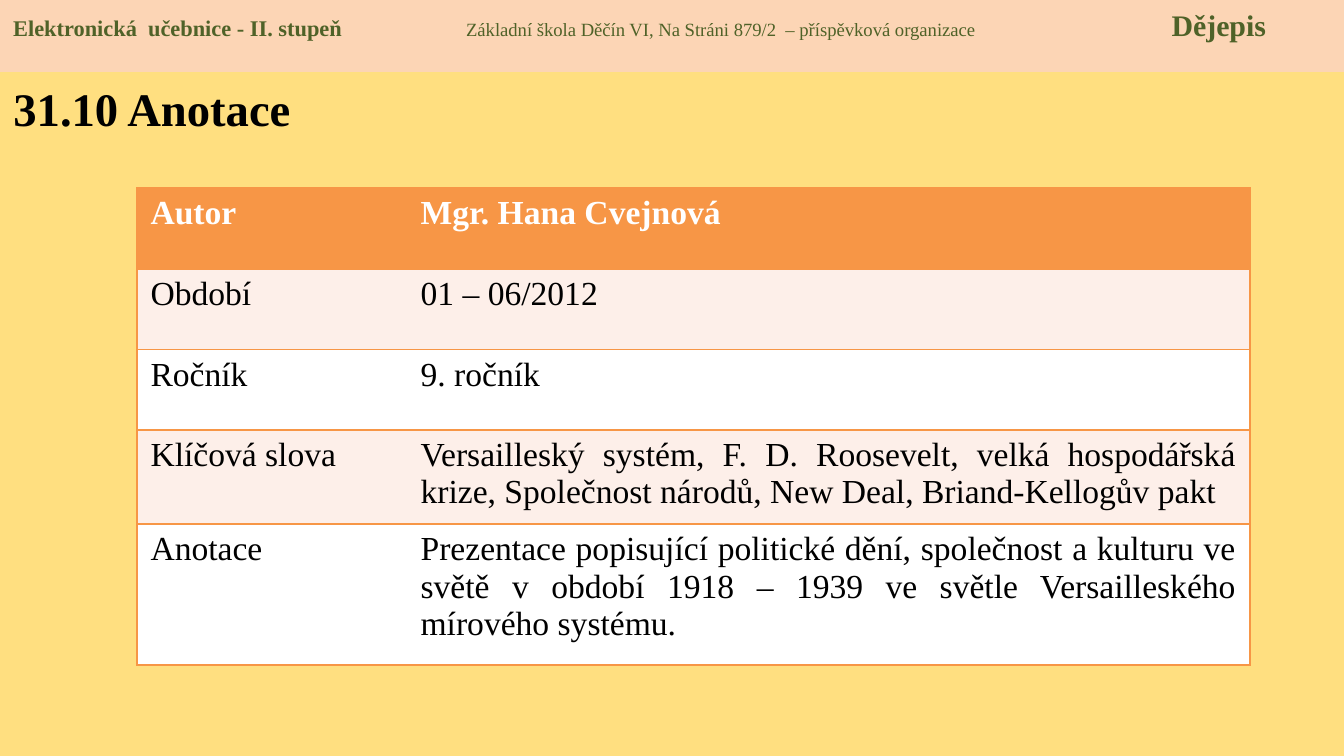
from lxml import etree
from pptx import Presentation
from pptx.dml.color import RGBColor
from pptx.enum.shapes import MSO_SHAPE
from pptx.enum.text import MSO_ANCHOR, PP_ALIGN
from pptx.oxml import parse_xml
from pptx.oxml.ns import nsdecls, qn
from pptx.util import Inches, Pt

RECT = MSO_SHAPE.RECTANGLE
TOP = MSO_ANCHOR.TOP
LEFT, JUST = PP_ALIGN.LEFT, PP_ALIGN.JUSTIFY
WIDE = 10
HIGH = WIDE * 9 / 16
GRID = 100
PLAIN = "{2D5ABB26-0587-4C30-8999-92F81FD0307C}"

HEAD = [
    ("Elektronická  učebnice - II. stupeň", 12, True),
    ("Základní škola Děčín VI, Na Stráni 879/2  – příspěvková organizace", 10, False),
    ("Dějepis", 16, True),
]
STOPS = [33.7, 86.2]
ROWS = [
    ("Autor", "Mgr. Hana Cvejnová"),
    ("Období", "01 – 06/2012"),
    ("Ročník", "9. ročník"),
    ("Klíčová slova", "Versailleský systém, F. D. Roosevelt, velká hospodářská krize, "
     "Společnost národů, New Deal, Briand-Kellogův pakt"),
    ("Anotace", "Prezentace popisující politické dění, společnost a kulturu ve světě "
     "v období 1918 – 1939 ve světle Versailleského mírového systému."),
]
COLS = [20.1, 62.7]
HIGHS = [6, 6, 6, 7, 10.5]


def color(code):
    return RGBColor.from_string(code)


def span(cells):
    return Inches(cells * WIDE / GRID)


class Deck:
    face = "Times New Roman"
    back, band, green = "FFDF80", "FCD5B5", "4F6228"
    orange, pale, white, black = "F79646", "FDEFE9", "FFFFFF", "000000"

    def __init__(self):
        self.prs = Presentation()
        self.prs.slide_width, self.prs.slide_height = Inches(WIDE), Inches(HIGH)
        self.slide = self.prs.slides.add_slide(self.prs.slide_layouts[5])
        self.paint(self.slide.background.fill, self.back)

    def paint(self, fill, code):
        fill.solid()
        fill.fore_color.rgb = color(code)

    def style(self, font, size, code, bold):
        font.name, font.size, font.bold = self.face, Pt(size), bold
        font.color.rgb = color(code)

    def title(self, text, *area):
        shape = self.slide.shapes.title
        shape.left, shape.top, shape.width, shape.height = map(span, area)
        frame = shape.text_frame
        frame.text, frame.word_wrap, frame.vertical_anchor = text, True, TOP
        para = frame.paragraphs[0]
        para.alignment = LEFT
        self.style(para.font, 25, self.black, True)

    def banner(self, parts, stops, *area):
        shape = self.slide.shapes.add_shape(RECT, *map(span, area))
        shape.shadow.inherit = False
        shape.line.fill.background()
        self.paint(shape.fill, self.band)
        frame = shape.text_frame
        frame.word_wrap, frame.vertical_anchor = True, TOP
        para = frame.paragraphs[0]
        para.alignment = LEFT
        tabs = etree.SubElement(para._p.get_or_add_pPr(), qn("a:tabLst"))
        for stop in stops:
            etree.SubElement(tabs, qn("a:tab"), pos=str(span(stop)), algn="l")
        for i, (text, size, bold) in enumerate(parts):
            run = para.add_run()
            run.text = "\t" + text if i else text
            self.style(run.font, size, self.green, bold)

    def edge(self, cell, sides):
        for side in sides:
            cell._tc.get_or_add_tcPr().append(parse_xml(
                f'<a:ln{side} {nsdecls("a")} w="{Pt(1)}"><a:solidFill>'
                f'<a:srgbClr val="{self.orange}"/></a:solidFill></a:ln{side}>'))

    def table(self, rows, cols, highs, x, y):
        shape = self.slide.shapes.add_table(
            len(rows), len(cols), *map(span, (x, y, sum(cols), sum(highs))))
        table = shape.table
        table.horz_banding = False
        table._tbl.tblPr.find(qn("a:tableStyleId")).text = PLAIN
        for col, w in zip(table.columns, cols):
            col.width = span(w)
        for r, (row, h) in enumerate(zip(rows, highs)):
            table.rows[r].height = span(h)
            for c, text in enumerate(row):
                cell = table.cell(r, c)
                self.edge(cell, "RTB" if c else "LTB")
                shade = self.pale if r % 2 else self.white
                self.paint(cell.fill, shade if r else self.orange)
                cell.text = text
                para = cell.text_frame.paragraphs[0]
                para.alignment = JUST if r else LEFT
                self.style(para.font, 18, self.black if r else self.white, r == 0)

    def save(self):
        self.prs.save("out.pptx")


def main():
    deck = Deck()
    deck.banner(HEAD, STOPS, 0, 0, 100, 5.35)
    deck.title("31.10 Anotace", 0, 5.45, 37.4, 6.5)
    deck.table(ROWS, COLS, HIGHS, 10.2, 14)
    deck.save()


if __name__ == "__main__":
    main()
